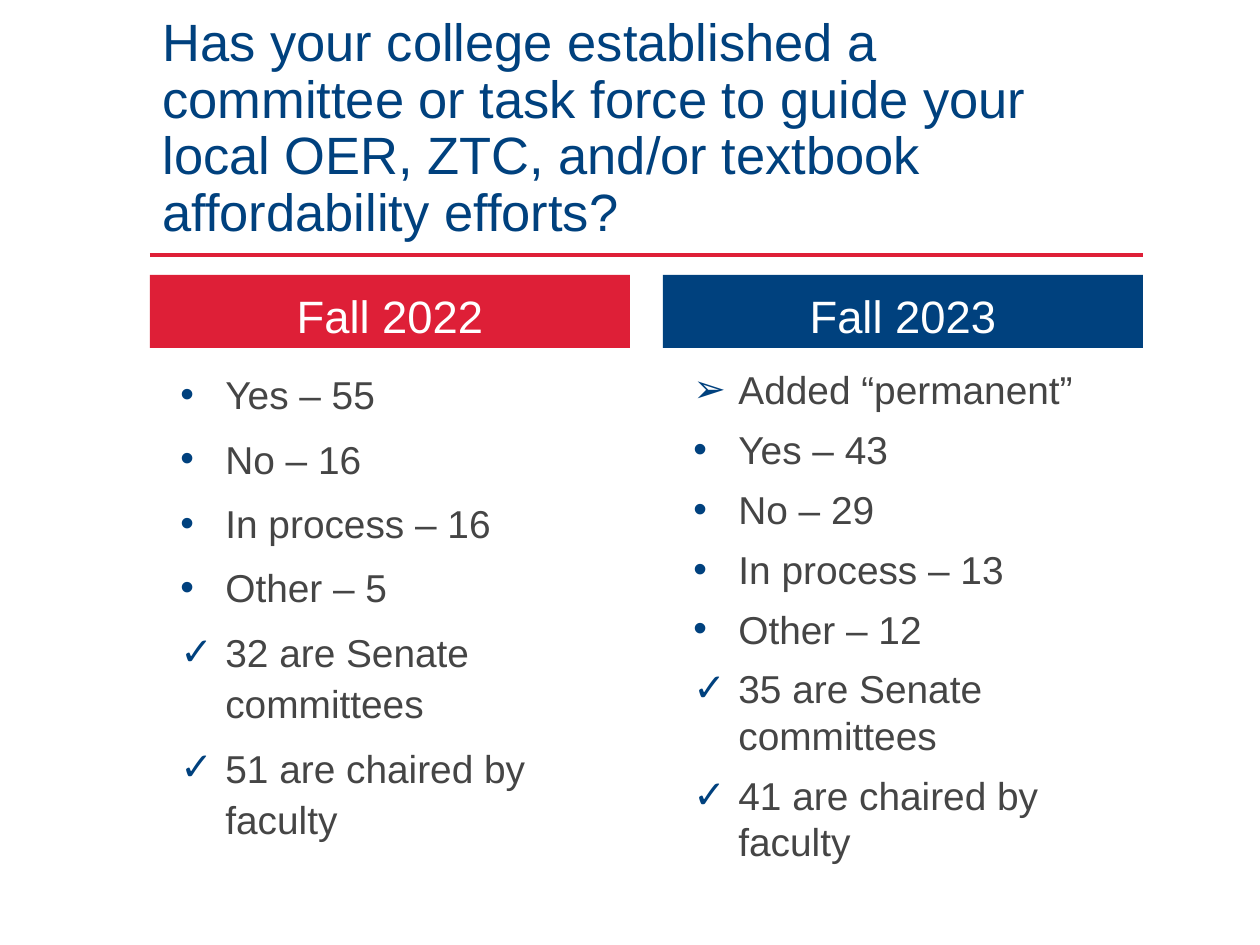
import pptx
import pptx.dml.color
import pptx.enum.shapes
import pptx.enum.text
import pptx.oxml.ns
import pptx.util
from lxml import etree

PX = 914400 / 126
BLUE = pptx.dml.color.RGBColor(0x00, 0x41, 0x7E)
RED = pptx.dml.color.RGBColor(0xDE, 0x1F, 0x37)
GRAY = pptx.dml.color.RGBColor(0x45, 0x45, 0x45)
WHITE = pptx.dml.color.RGBColor(0xFF, 0xFF, 0xFF)
FONT = "Arial"
ANCHOR = pptx.enum.text.MSO_ANCHOR
ALIGN = pptx.enum.text.PP_ALIGN

LEFT, WIDTH = 150, 993
COLUMN_WIDTH, COLUMN_STEP = 480, 513
BULLET, CHECK, ARROW = "•", "✓", "➢"
COLUMNS = [
    ("Fall 2022", RED, 1.1, COLUMN_WIDTH, [
        (BULLET, "Yes – 55"),
        (BULLET, "No – 16"),
        (BULLET, "In process – 16"),
        (BULLET, "Other – 5"),
        (CHECK, "32 are Senate committees"),
        (CHECK, "51 are chaired by faculty"),
    ]),
    ("Fall 2023", BLUE, 1.0, COLUMN_WIDTH + 16, [
        (ARROW, "Added “permanent”"),
        (BULLET, "Yes – 43"),
        (BULLET, "No – 29"),
        (BULLET, "In process – 13"),
        (BULLET, "Other – 12"),
        (CHECK, "35 are Senate committees"),
        (CHECK, "41 are chaired by faculty"),
    ]),
]


def emu(pixels):
    return pptx.util.Emu(round(pixels * PX))


def set_bullet(paragraph, character):
    properties = paragraph._p.get_or_add_pPr()
    properties.set("marL", str(emu(63)))
    properties.set("indent", str(emu(-45)))
    color = etree.SubElement(properties, pptx.oxml.ns.qn("a:buClr"))
    etree.SubElement(color, pptx.oxml.ns.qn("a:srgbClr"), val=str(BLUE))
    etree.SubElement(properties, pptx.oxml.ns.qn("a:buFont"), typeface=FONT)
    etree.SubElement(properties, pptx.oxml.ns.qn("a:buChar"), char=character)


def add_text(paragraph, text, *, size, color, align=ALIGN.LEFT,
             spacing=1.0, before=0, bullet=None):
    paragraph.alignment = align
    paragraph.line_spacing = spacing
    paragraph.space_before = pptx.util.Pt(before)
    if bullet:
        set_bullet(paragraph, bullet)
    run = paragraph.add_run()
    run.text = text
    run.font.name = FONT
    run.font.size = pptx.util.Pt(size)
    run.font.color.rgb = color


def add_frame(slide, box, anchor, fill=None):
    place = [emu(value) for value in box]
    if fill is None:
        shape = slide.shapes.add_textbox(*place)
    else:
        shape = slide.shapes.add_shape(
            pptx.enum.shapes.MSO_SHAPE.RECTANGLE, *place)
        shape.shadow.inherit = False
        shape.fill.solid()
        shape.fill.fore_color.rgb = fill
        shape.line.fill.background()
    shape.text_frame.word_wrap = True
    shape.text_frame.vertical_anchor = anchor
    return shape.text_frame


def add_title(slide, left, top, width, height):
    frame = add_frame(slide, (left, top, width, height), ANCHOR.BOTTOM)
    add_text(frame.paragraphs[0],
             "Has your college established a committee or task force to guide "
             "your local OER, ZTC, and/or textbook affordability efforts?",
             size=30, color=BLUE, spacing=0.9)
    # Rule under the title
    rule_top = emu(top + height + 6)
    rule = slide.shapes.add_connector(
        pptx.enum.shapes.MSO_CONNECTOR.STRAIGHT,
        emu(left), rule_top, emu(left + width), rule_top)
    rule.line.color.rgb = RED
    rule.line.width = pptx.util.Pt(2.5)
    etree.SubElement(rule._element.spPr, pptx.oxml.ns.qn("a:effectLst"))


def add_column(slide, left, top, heading, fill, spacing, list_width, items):
    # Heading bar
    bar = add_frame(slide, (left, top, COLUMN_WIDTH, 73), ANCHOR.BOTTOM, fill)
    add_text(bar.paragraphs[0], heading, size=25.9, color=WHITE,
             align=ALIGN.CENTER, spacing=0.8, before=7.5)
    # Answers
    answers = add_frame(slide, (left, top + 85, list_width, 527), ANCHOR.TOP)
    for index, (bullet, text) in enumerate(items):
        paragraph = answers.add_paragraph() if index else answers.paragraphs[0]
        add_text(paragraph, text, size=22.2, color=GRAY, spacing=spacing,
                 before=7.5, bullet=bullet)


def main():
    presentation = pptx.Presentation()
    presentation.slide_width = emu(1260)
    presentation.slide_height = emu(945)
    slide = presentation.slides.add_slide(presentation.slide_layouts[6])
    add_title(slide, LEFT, 126, WIDTH, 123)
    for index, column in enumerate(COLUMNS):
        add_column(slide, LEFT + index * COLUMN_STEP, 275, *column)
    presentation.save("out.pptx")


if __name__ == "__main__":
    main()
